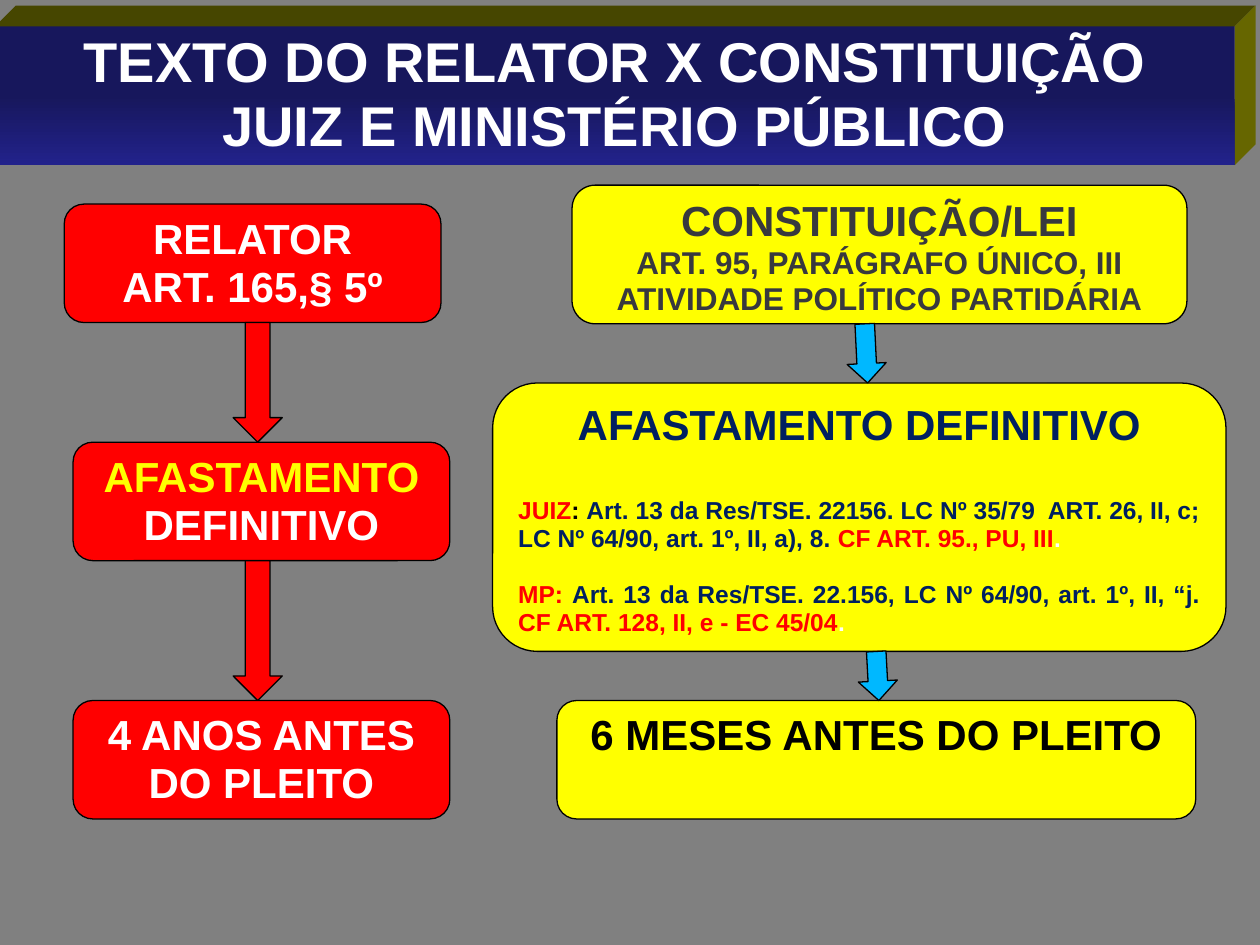
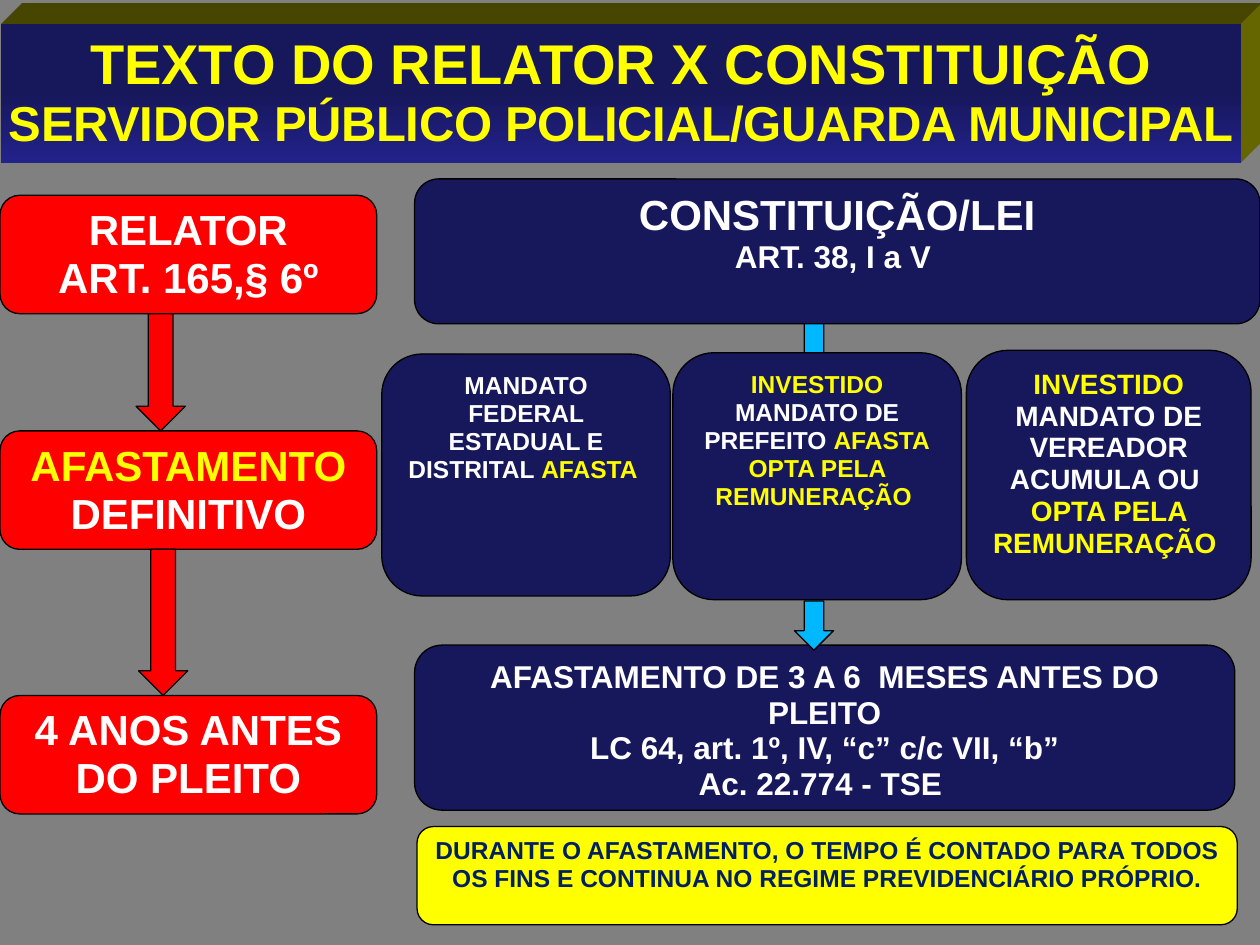
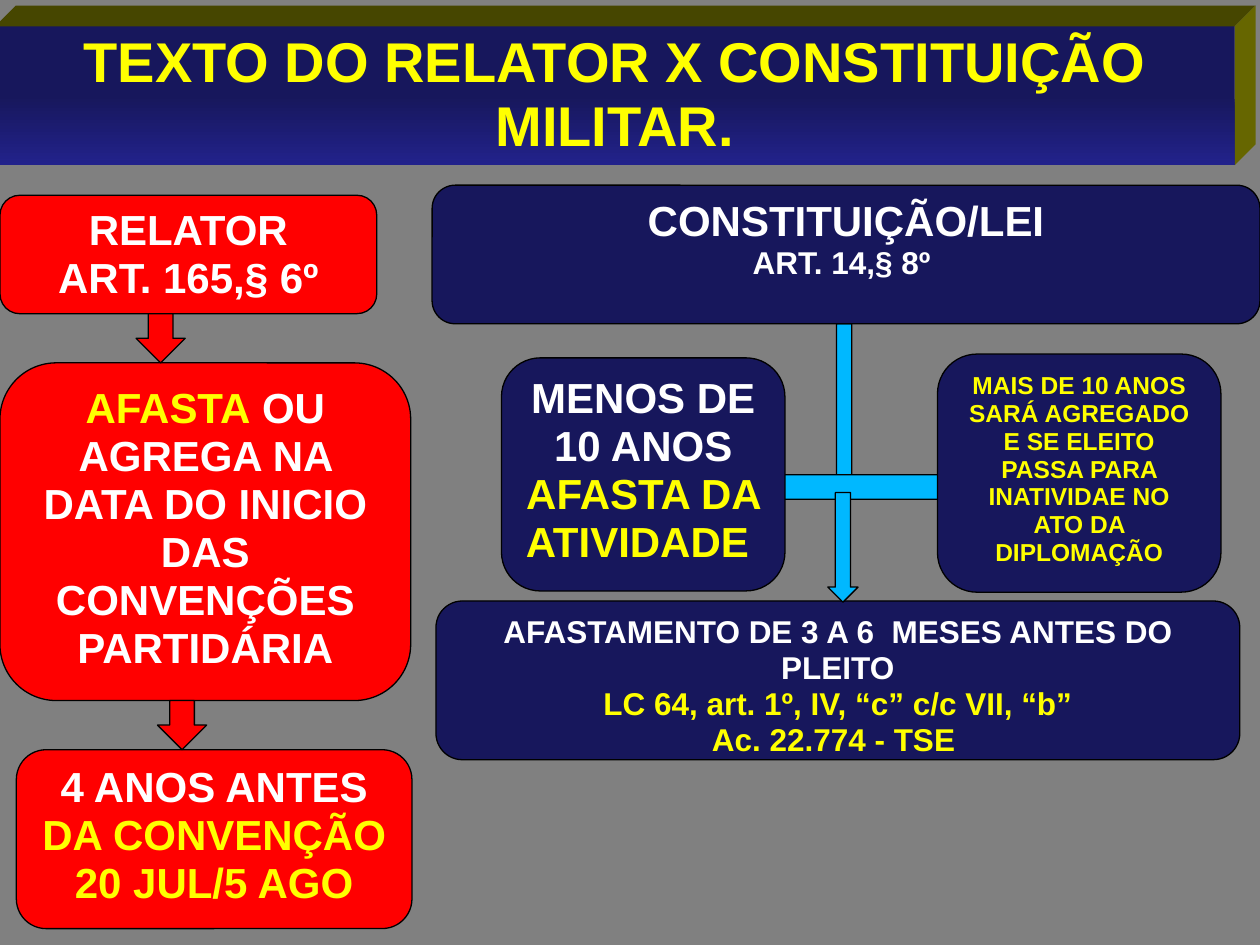
from pptx import Presentation
from pptx.dml.color import RGBColor
from pptx.enum.shapes import MSO_SHAPE
from pptx.enum.text import MSO_ANCHOR, MSO_AUTO_SIZE, PP_ALIGN
from pptx.util import Inches, Pt

ROUND, DOWN = MSO_SHAPE.ROUNDED_RECTANGLE, MSO_SHAPE.DOWN_ARROW
ACROSS = MSO_SHAPE.LEFT_RIGHT_ARROW
TOP, MIDDLE, FIXED = MSO_ANCHOR.TOP, MSO_ANCHOR.MIDDLE, MSO_AUTO_SIZE.NONE
CENTER, JUSTIFY = PP_ALIGN.CENTER, PP_ALIGN.JUSTIFY

FONT = "Arial"
COLS, ROWS = 100, 75
GRAY, BLACK, WHITE = "808080", "000000", "FFFFFF"
RED, YELLOW, SKY = "FF0000", "FFFF00", "00B8FF"
NAVY, BLUE, INK, SLATE = "17175C", "22228B", "002060", "38393E"
OLIVE, MOSS = "464600", "666600"
DEPTH = 1.65
HEAD = "TEXTO DO RELATOR X CONSTITUIÇÃO"


def unit(count):
    """Turn grid columns or rows into a length."""
    return Inches(count / 10)


def tint(code):
    """Turn a hex string into a colour."""
    return RGBColor.from_string(code)


def paint(shape, code):
    """Give a shape a flat fill and no shadow."""
    shape.shadow.inherit = False
    shape.fill.solid()
    shape.fill.fore_color.rgb = tint(code)


def line(size, *runs, align=CENTER, before=0):
    """Describe a paragraph whose runs are (colour, text) pairs."""
    return size, runs, align, before


def write(frame, lines):
    """Fill a text frame with described paragraphs."""
    for index, (size, runs, align, before) in enumerate(lines):
        para = frame.add_paragraph() if index else frame.paragraphs[0]
        para.alignment, para.line_spacing = align, 0.95
        para.space_before = Pt(before)
        font = para.font
        font.name, font.size, font.bold = FONT, Pt(size), True
        font.color.rgb = tint(runs[0][0])
        for code, text in runs:
            run = para.add_run()
            run.text = text
            if code != runs[0][0]:
                run.font.color.rgb = tint(code)


def squeeze(para, pitch):
    """Tighten the letters of a paragraph by hundredths of a point."""
    for run in para.runs:
        run._r.get_or_add_rPr().set("spc", str(-pitch))


def put(slide, kind, box, code):
    """Add an outlined preset shape on the grid."""
    shape = slide.shapes.add_shape(kind, *map(unit, box))
    paint(shape, code)
    shape.line.color.rgb = tint(BLACK)
    shape.line.width = Pt(0.75)
    return shape


def card(slide, box, code, lines):
    """Add a rounded card with text from its top."""
    frame = put(slide, ROUND, box, code).text_frame
    frame.word_wrap, frame.vertical_anchor = True, TOP
    write(frame, lines)


def face(slide, code, points):
    """Add one bevelled face of the title band."""
    spots = [(unit(x), unit(y)) for x, y in points]
    pen = slide.shapes.build_freeform(*spots[0])
    pen.add_line_segments(spots[1:])
    shape = pen.convert_to_shape()
    paint(shape, code)
    shape.line.fill.background()


def band(slide, box, lines):
    """Set the title on a raised navy band."""
    left, top, width, height = box
    right, base = left + width, top + height
    back, edge = top - DEPTH, right + DEPTH
    face(slide, OLIVE, [(left, top), (left + DEPTH, back), (edge, back), (right, top)])
    face(slide, MOSS, [(right, top), (edge, back), (edge, base - DEPTH), (right, base)])
    title = slide.shapes.title
    title.left, title.top, title.width, title.height = map(unit, box)
    title.fill.gradient()
    title.fill.gradient_angle = 270
    for stop, code, spot in zip(title.fill.gradient_stops, (NAVY, BLUE), (0.5, 1)):
        stop.color.rgb, stop.position = tint(code), spot
    frame = title.text_frame
    frame.word_wrap, frame.auto_size = False, FIXED
    frame.margin_left = frame.margin_right = 0
    frame.vertical_anchor = MIDDLE
    write(frame, lines)


def chain(slide, box, code, cards, links, hue, thick):
    """Stack cards in a box and link each to the next by an arrow."""
    left, top = box
    for (x, y, wide, high), lines in cards:
        card(slide, (left + x, top + y, wide, high), code, lines)
    for (mid, tilt), (above, _), (below, _) in zip(links, cards, cards[1:]):
        start = above[1] + above[3]
        spot = (left + mid - thick / 2, top + start, thick, below[1] - start)
        put(slide, DOWN, spot, hue).rotation = tilt


def report(slide, box, cards, links):
    """Draw the red column of the rapporteur's text."""
    chain(slide, box, RED, cards, [(mid, 0) for mid in links], RED, 3.9)


def mandates(slide, box, head, foot, note, cells):
    """Draw the law panel with three mandates side by side."""
    left, top = box
    card(slide, (left, top, 67.1, 11.5), NAVY, head)
    card(slide, (left, top + 37, 65.1, 13.1), NAVY, foot)
    for y in (11.5, 33.5):
        put(slide, DOWN, (left + 30.15, top + y, 3.1, 3.9), SKY)
    for (x, y, wide, high), lines in cells:
        card(slide, (left + x, top + y, wide, high), NAVY, lines)
    card(slide, (left + 0.2, top + 51.4, 65.1, 7.8), YELLOW, note)


def ranks(slide, box, head, foot, cells):
    """Draw the law panel that forks into two lengths of service."""
    left, top = box
    put(slide, DOWN, (left + 31.5, top + 11, 2.4, 13.4), SKY)
    put(slide, ACROSS, (left + 25.1, top + 22, 17.3, 3.9), SKY)
    card(slide, (left, top, 65.7, 11), NAVY, head)
    card(slide, (left + 0.3, top + 33, 63.8, 12.6), NAVY, foot)
    for (x, y, wide, high), lines in cells:
        card(slide, (left + x, top + y, wide, high), NAVY, lines)
    put(slide, DOWN, (left + 31.4, top + 24.4, 2.4, 8.7), SKY)


def origin(number):
    """Word the card that names the rapporteur's article."""
    return [line(24, (WHITE, "RELATOR")), line(24, (WHITE, f"ART. 165,§ {number}º"))]


def leave(code):
    """Word the closing card on leave before the vote."""
    return [line(18, (WHITE, "AFASTAMENTO DE 3 A 6  MESES ANTES DO PLEITO")),
            line(18, (code, "LC 64, art. 1º, IV, “c” c/c VII, “b”")),
            line(18, (code, "Ac. 22.774 - TSE "))]


def law(text):
    """Word the heading card of a navy law panel."""
    return [line(24, (WHITE, "CONSTITUIÇÃO/LEI")), line(18, (WHITE, text))]


FINAL = [line(24, (YELLOW, "AFASTAMENTO"), (WHITE, " DEFINITIVO"))]
YEARS = [line(24, (WHITE, "4 ANOS ANTES DO PLEITO"))]


def judges(slide):
    """Build the slide on judges and prosecutors."""
    band(slide, (-0.4, 2.1, 98.4, 11),
         [line(32, (WHITE, HEAD)), line(32, (WHITE, "JUIZ E MINISTÉRIO PÚBLICO"))])
    report(slide, (5.1, 16.2), [
        ((0, 0, 29.9, 9.4), origin(5)),
        ((0.7, 18.9, 29.9, 9.4), FINAL),
        ((0.7, 39.4, 29.9, 9.4), YEARS)], (15.35, 15.35))
    rules = [
        line(24, (INK, "AFASTAMENTO DEFINITIVO")),
        line(14, (RED, "JUIZ"), (BLACK, ": "),
             (INK, "Art. 13 da Res/TSE. 22156. LC Nº 35/79  ART. 26, II, c; "
                   "LC Nº 64/90, art. 1º, II, a), 8. "),
             (RED, "CF ART. 95., PU, III"), (WHITE, "."), align=JUSTIFY, before=27),
        line(14, (RED, "MP: "),
             (INK, "Art. 13 da Res/TSE. 22.156, LC Nº 64/90, art. 1º, II, “j. "),
             (RED, "CF ART. 128, II, e - EC 45/04"), (WHITE, "."),
             align=JUSTIFY, before=16)]
    chain(slide, (39.1, 14.7), YELLOW, [
        ((6.3, 0, 48.8, 11), [
            line(24, (SLATE, "CONSTITUIÇÃO/LEI")),
            line(18, (SLATE, "ART. 95, PARÁGRAFO ÚNICO, III")),
            line(18, (SLATE, "ATIVIDADE POLÍTICO PARTIDÁRIA"))]),
        ((0, 15.7, 58.2, 21.3), rules),
        ((5.1, 40.9, 50.7, 9.4), [line(24, (BLACK, "6 MESES ANTES DO PLEITO"))])],
        ((29.65, -2.8), (30.55, -3.1)), SKY, 3.1)


def guards(slide):
    """Build the slide on police and municipal guards."""
    band(slide, (0.1, 1.9, 98.4, 11),
         [line(32, (YELLOW, HEAD)),
          line(28, (YELLOW, "SERVIDOR PÚBLICO POLICIAL/GUARDA MUNICIPAL"))])
    squeeze(slide.shapes.title.text_frame.paragraphs[1], 20)
    report(slide, (0, 15.5), [
        ((0, 0, 29.9, 9.4), origin(6)),
        ((0, 18.7, 29.9, 9.4), FINAL),
        ((0, 39.7, 29.9, 9.4), YEARS)], (12.75, 12.95))
    mandates(slide, (32.9, 14.2), law("ART. 38, I a V "), leave(WHITE),
             [line(14, (INK, "DURANTE O AFASTAMENTO, O TEMPO É CONTADO PARA TODOS OS FINS "
                             "E CONTINUA NO REGIME PREVIDENCIÁRIO PRÓPRIO."))], [
        ((-2.6, 13.9, 22.9, 19.2), [
            line(14, (WHITE, "MANDATO FEDERAL ESTADUAL E DISTRITAL "), (YELLOW, "AFASTA "))]),
        ((20.5, 13.8, 22.9, 19.6), [
            line(14, (YELLOW, "INVESTIDO"), (WHITE, " MANDATO DE PREFEITO "),
                 (YELLOW, "AFASTA")),
            line(14, (YELLOW, "OPTA PELA REMUNERAÇÃO "))]),
        ((43.8, 13.6, 22.6, 19.8), [
            line(16, (YELLOW, "INVESTIDO "), (WHITE, "MANDATO DE VEREADOR ACUMULA OU ")),
            line(16, (YELLOW, "OPTA PELA REMUNERAÇÃO "))])])


def troops(slide):
    """Build the slide on the military."""
    band(slide, (-0.4, 2.1, 98.4, 11),
         [line(32, (YELLOW, HEAD)), line(32, (YELLOW, "MILITAR."))])
    report(slide, (0, 15.5), [
        ((0, 0, 29.9, 9.4), origin(6)),
        ((0, 13.3, 32.6, 26.8), [
            line(24, (YELLOW, "AFASTA"),
                 (WHITE, " OU AGREGA NA DATA DO INICIO DAS CONVENÇÕES PARTIDÁRIA"))]),
        ((1.3, 44, 31.4, 14.2), [
            line(24, (WHITE, "4 ANOS ANTES "), (YELLOW, "DA CONVENÇÃO")),
            line(24, (YELLOW, "20 JUL/5 AGO"))])], (12.75, 14.45))
    ranks(slide, (34.3, 14.7), law("ART. 14,§ 8º "), leave(YELLOW), [
        ((5.5, 13.7, 22.5, 18.5), [
            line(24, (WHITE, "MENOS DE 10 ANOS "), (YELLOW, "AFASTA DA ATIVIDADE "))]),
        ((40.1, 13.4, 22.5, 18.9), [
            line(14, (YELLOW, "MAIS DE 10 ANOS SARÁ AGREGADO E SE ELEITO PASSA PARA "
                              "INATIVIDAE NO ATO DA DIPLOMAÇÃO"))])])


def main():
    """Build and save the deck."""
    deck = Presentation()
    deck.slide_width, deck.slide_height = unit(COLS), unit(ROWS)
    ground = deck.slide_master.background.fill
    ground.solid()
    ground.fore_color.rgb = tint(GRAY)
    for build in (judges, guards, troops):
        build(deck.slides.add_slide(deck.slide_layouts[5]))
    deck.save("out.pptx")


if __name__ == "__main__":
    main()
